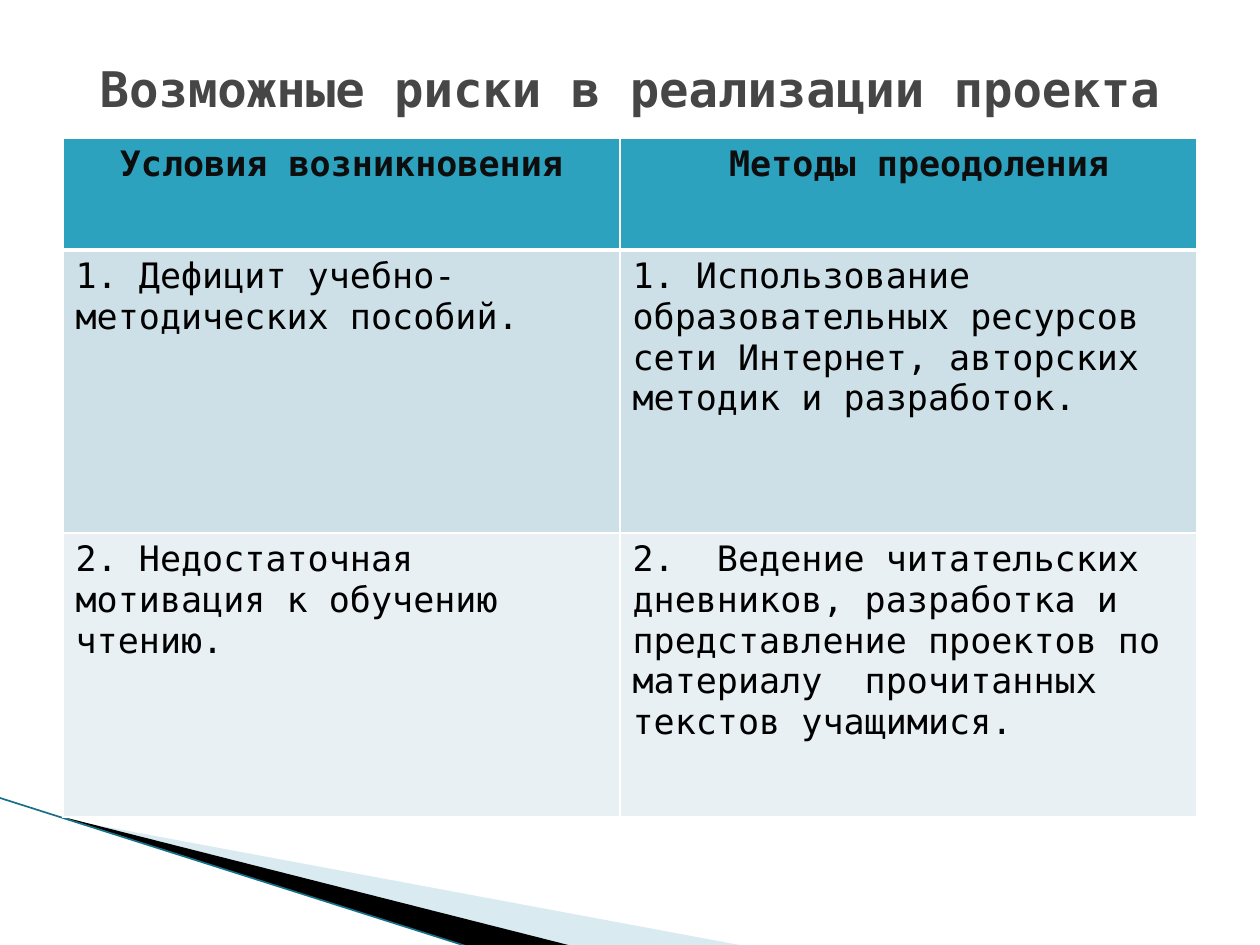
from lxml import etree
from pptx import Presentation
from pptx.dml.color import RGBColor
from pptx.enum.shapes import MSO_CONNECTOR
from pptx.enum.text import MSO_ANCHOR, PP_ALIGN
from pptx.oxml.ns import qn
from pptx.util import Pt

PX = 914400 / 126
FONT = "DejaVu Sans Mono"
CENTER, LEFT = PP_ALIGN.CENTER, PP_ALIGN.LEFT
MIDDLE = MSO_ANCHOR.MIDDLE
STRAIGHT = MSO_CONNECTOR.STRAIGHT
HEX = {
    "title": "464646", "head": "0D0D0D", "text": "000000",
    "teal": "2DA2BF", "odd": "CDE0E8", "even": "E8F0F4",
    "rule": "FFFFFF", "pale": "A0CBDC", "dark": "000000", "edge": "17708A",
}
RISKS = [
    ("Условия возникновения", "Методы преодоления"),
    ("1. Дефицит учебно-методических пособий.",
     "1. Использование образовательных ресурсов сети Интернет, "
     "авторских методик и разработок."),
    ("2. Недостаточная мотивация к обучению чтению.",
     "2.  Ведение читательских дневников, разработка и представление "
     "проектов по материалу  прочитанных текстов учащимися."),
]


def emu(*sizes):
    return [round(size * PX) for size in sizes]


def color(name):
    return RGBColor.from_string(HEX[name])


def write(frame, text, size, tone, bold, align):
    frame.text = text
    para = frame.paragraphs[0]
    para.alignment = align
    font = para.runs[0].font
    font.name, font.size, font.bold = FONT, Pt(size), bold
    font.color.rgb = color(tone)


def add_wedge(slide, x, y, points, tone, alpha=100):
    """Draw a filled outline; points are relative to (x, y)."""
    spots = [(x + dx, y + dy) for dx, dy in points]
    pen = slide.shapes.build_freeform(*spots[0], scale=PX)
    pen.add_line_segments(spots[1:])
    wedge = pen.convert_to_shape()
    wedge.shadow.inherit = False
    wedge.fill.solid()
    wedge.fill.fore_color.rgb = color(tone)
    wedge.line.fill.background()
    if alpha < 100:
        rgb = wedge.fill._xPr.find(".//" + qn("a:srgbClr"))
        etree.SubElement(rgb, qn("a:alpha"), val=str(alpha * 1000))


def add_swoosh(slide, x, y, w, h):
    """Draw the wedges and the edge line in the bottom left corner."""
    add_wedge(slide, x, y, [(69, 22), (w, h), (575, h), (69, 21)], "pale", 40)
    add_wedge(slide, x, y, [(67, 20), (576, h), (469, h), (68, 21)], "dark")
    edge = slide.shapes.add_connector(STRAIGHT, *emu(x, y, x + 469, y + h))
    edge.line.color.rgb = color("edge")
    edge.line.width = Pt(0.95)
    etree.SubElement(edge._element.spPr, qn("a:effectLst"))


def add_borders(cell, widths):
    """Set the left, right, top and bottom borders, in points."""
    props = cell._tc.get_or_add_tcPr()
    for spot, (side, width) in enumerate(zip("LRTB", widths)):
        line = etree.Element(qn(f"a:ln{side}"), w=str(Pt(width)))
        fill = etree.SubElement(line, qn("a:solidFill"))
        etree.SubElement(fill, qn("a:srgbClr"), val=HEX["rule"])
        props.insert(spot, line)


def add_risks(slide, x, y, w, h):
    frame = slide.shapes.add_table(len(RISKS), 2, *emu(x, y, w, h))
    table = frame.table
    for col, width in zip(table.columns, emu(557, w - 557)):
        col.width = width
    for row, height in zip(table.rows, emu(112, 283, h - 395)):
        row.height = height
    for r, texts in enumerate(RISKS):
        head = r == 0
        for c, text in enumerate(texts):
            cell = table.cell(r, c)
            write(cell.text_frame, text, 20, "head" if head else "text",
                  head, CENTER if head else LEFT)
            cell.fill.solid()
            cell.fill.fore_color.rgb = color(("teal", "odd", "even")[r])
            add_borders(cell, (1, 1, 3 if r == 1 else 1, 3 if head else 1))
    table.cell(0, 1).margin_left = emu(34)[0]


def add_title(slide, x, y, w, h):
    frame = slide.shapes.add_textbox(*emu(x, y, w, h)).text_frame
    frame.word_wrap = True
    frame.vertical_anchor = MIDDLE
    write(frame, "Возможные риски в реализации проекта", 28, "title", True,
          CENTER)


def main():
    deck = Presentation()
    deck.slide_width, deck.slide_height = emu(1260, 945)
    slide = deck.slides.add_slide(deck.slide_layouts[6])
    add_swoosh(slide, 0, 798, 750, 149)
    add_risks(slide, 63, 138, 1134, 679)
    add_title(slide, 63, 38, 1134, 100)
    deck.save("out.pptx")


if __name__ == "__main__":
    main()
